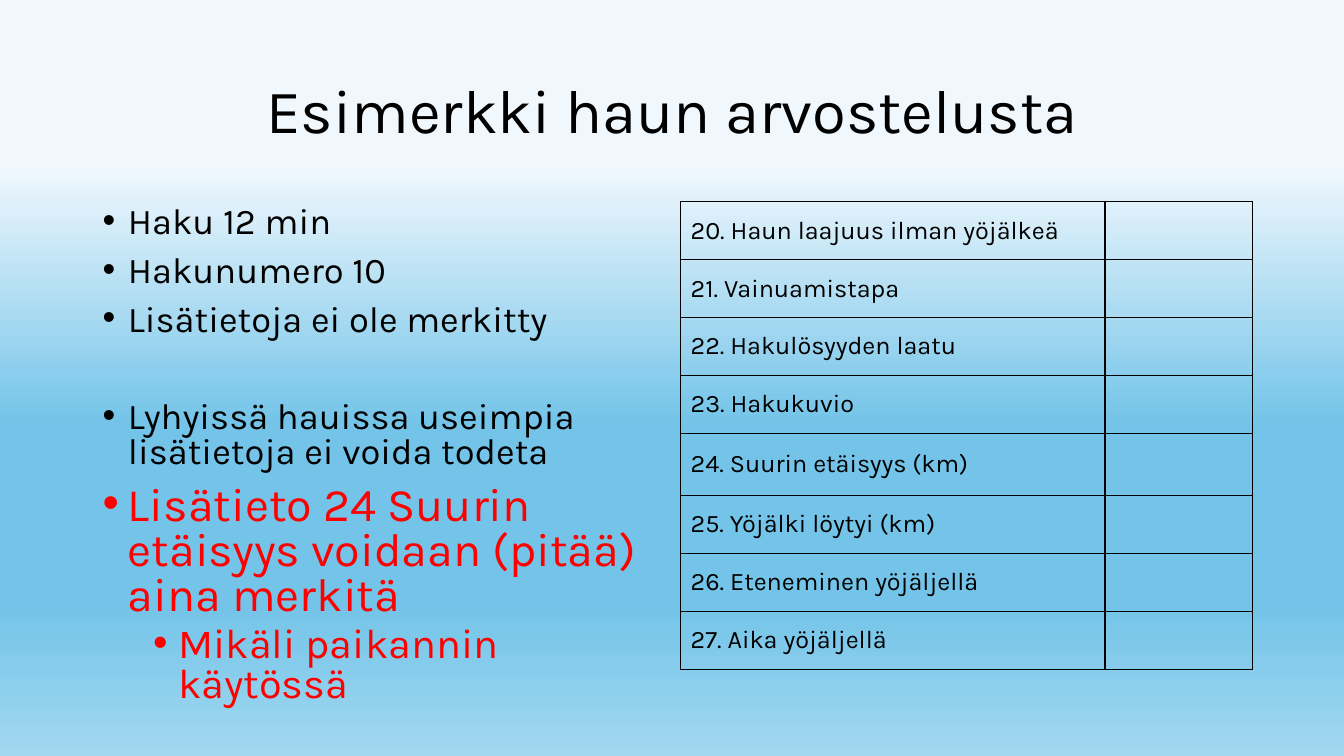
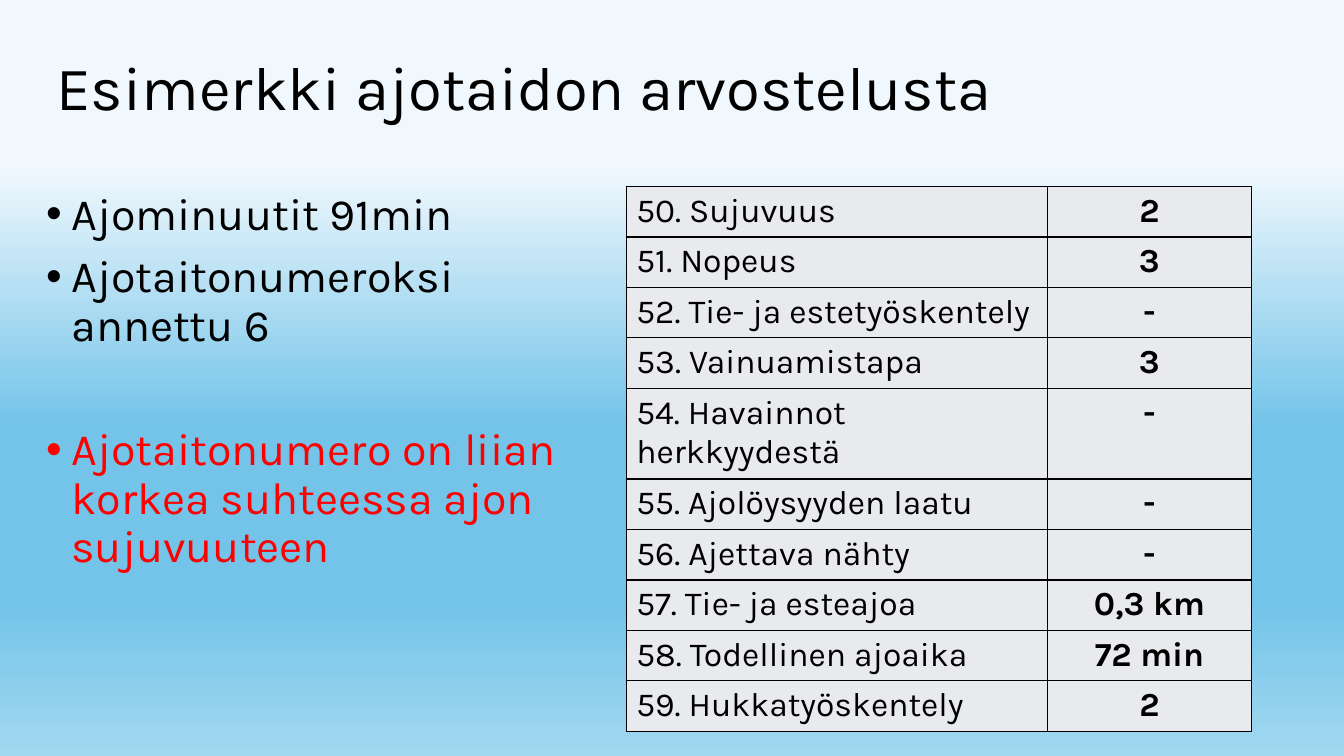
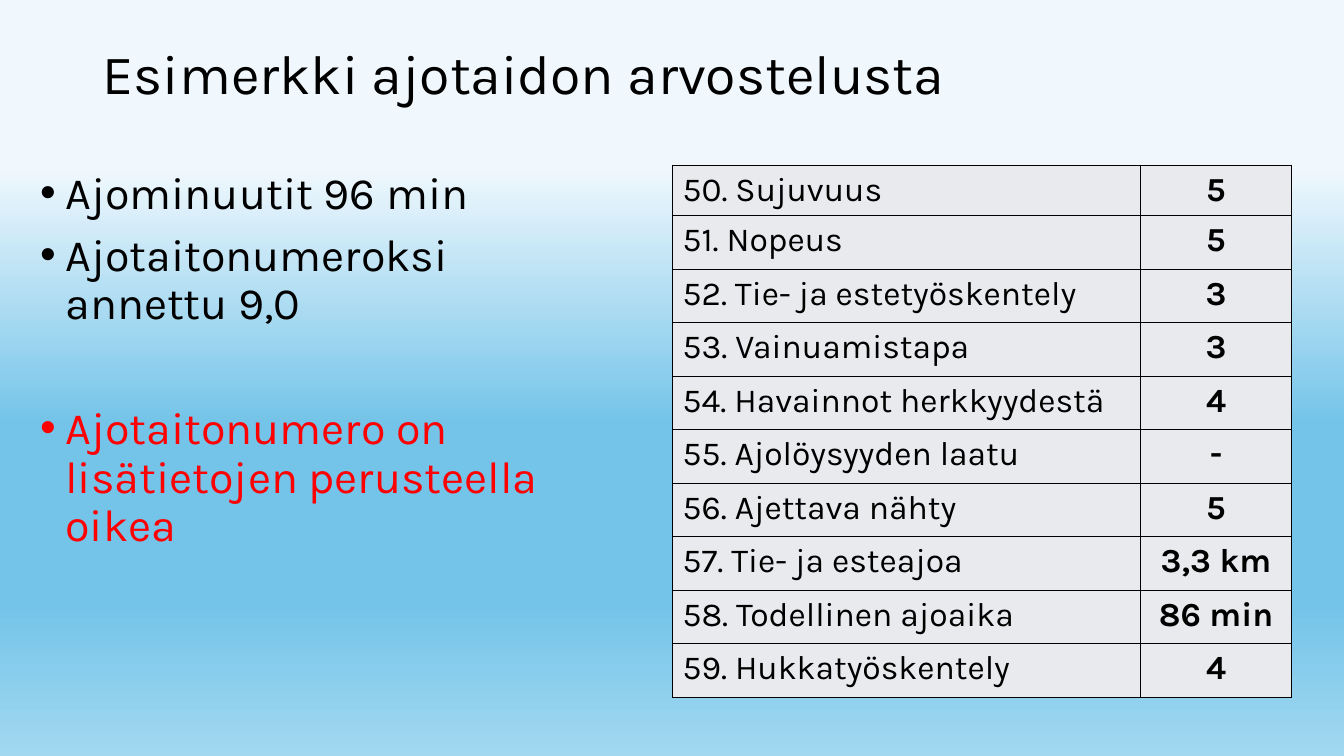
from lxml.etree import SubElement as Sub
from pptx import Presentation
from pptx.dml.color import RGBColor
from pptx.enum.text import MSO_ANCHOR as Anchor, PP_ALIGN as Align
from pptx.oxml.ns import qn
from pptx.util import Emu, Inches, Pt

FONT, BLACK, RED, GREY = "Karla", "000000", "FF0000", "E8EAED"
SKY = [(22, "F0F8FD"), (56, "74C4E9"), (80, "74C4E9"), (100, "A2D8F0")]
rgb = RGBColor.from_string

deck = Presentation()
deck.slide_width, deck.slide_height = Inches(13.33), Inches(7.5)
wide, high = deck.slide_width / 100, deck.slide_height / 100


def spot(box):
    """Turn left, top, width, height in percent of the slide into lengths."""
    return [Emu(int(v * u)) for v, u in zip(box, (wide, high, wide, high))]


def write(para, text, size, tone=BLACK, bold=False, align=Align.LEFT):
    para.text, para.alignment = text, align
    font = para.font
    font.name, font.size, font.bold = FONT, Pt(size), bold
    font.color.rgb = rgb(tone)


# Sky gradient on the master, shared by all slides
fill = deck.slide_master.background.fill
fill.gradient()
fill.gradient_angle = 270
stops = deck.slide_master.element.find(".//" + qn("a:gsLst"))
for old in list(stops):
    stops.remove(old)
for pos, tone in SKY:
    stop = Sub(stops, qn("a:gs"), pos=str(pos * 1000))
    Sub(stop, qn("a:srgbClr"), val=tone)

# Row labels
search = ["Haun laajuus ilman yöjälkeä", "Vainuamistapa", "Hakulösyyden laatu",
          "Hakukuvio", "Suurin etäisyys (km)", "Yöjälki löytyi (km)",
          "Eteneminen yöjäljellä", "Aika yöjäljellä"]
drive = ["Sujuvuus", "Nopeus", "Tie- ja estetyöskentely", "Vainuamistapa",
         "Havainnot herkkyydestä", "Ajolöysyyden laatu", "Ajettava nähty",
         "Tie- ja esteajoa", "Todellinen ajoaika", "Hukkatyöskentely"]

# Boxes, columns and rows in percent of the slide;
# points hold text, size, colour, level and space before
pages = [
    dict(title="Esimerkki haun arvostelusta", head=(6.9, 5.33, 86.27, 19.33),
         size=44, align=Align.CENTER,
         body=(6.9, 26.67, 42.54, 68), lead=0.8,
         points=[("Haku 12 min", 25.9, BLACK, 0, 10),
                 ("Hakunumero 10", 25.9, BLACK, 0, 10),
                 ("Lisätietoja ei ole merkitty", 25.9, BLACK, 0, 10),
                 ("Lyhyissä hauissa useimpia lisätietoja ei voida todeta",
                  25.9, BLACK, 0, 45),
                 ("Lisätieto 24 Suurin etäisyys voidaan (pitää) aina merkitä",
                  33.3, RED, 0, 10),
                 ("Mikäli paikannin käytössä", 29.6, RED, 1, 5)],
         grid=(50.64, 26.67), cols=(31.58, 10.95),
         rows=[7.67] * 4 + [8.2] + [7.67] * 3,
         first=20, names=search, marks=[""] * 8,
         text=18, anchor=Anchor.MIDDLE, shade=None),
    dict(title="Esimerkki ajotaidon arvostelusta", head=(3.45, 5.33, 86.27, 13.2),
         size=44, align=Align.LEFT,
         body=(2.7, 24.67, 40.14, 63.47), lead=0.9,
         points=[("Ajominuutit 91min", 32, BLACK, 0, 10),
                 ("Ajotaitonumeroksi annettu 6", 32, BLACK, 0, 10),
                 ("Ajotaitonumero on liian korkea suhteessa ajon sujuvuuteen",
                  32, RED, 0, 54.5)],
         grid=(46.59, 24.67), cols=(31.36, 15.15),
         rows=[6.53] * 4 + [11.73] + [6.53] * 5,
         first=50, names=drive,
         marks=["2", "3", "-", "3", "-", "-", "-", "0,3 km", "72 min", "2"],
         text=24, anchor=Anchor.TOP, shade=GREY),
    dict(title="Esimerkki ajotaidon arvostelusta", head=(6.9, 5.33, 86.27, 9.47),
         size=39.6, align=Align.LEFT,
         body=(2.25, 21.87, 42.54, 63.47), lead=0.9,
         points=[("Ajominuutit 96 min", 32, BLACK, 0, 10),
                 ("Ajotaitonumeroksi annettu 9,0", 32, BLACK, 0, 10),
                 ("Ajotaitonumero on lisätietojen perusteella oikea",
                  32, RED, 0, 54.5)],
         grid=(50.04, 21.87), cols=(34.81, 11.25),
         rows=[6.53] + [7.08] * 9,
         first=50, names=drive,
         marks=["5", "5", "3", "3", "4", "-", "5", "3,3 km", "86 min", "4"],
         text=24, anchor=Anchor.TOP, shade=GREY),
]

for page in pages:
    slide = deck.slides.add_slide(deck.slide_layouts[6])

    # Title
    frame = slide.shapes.add_textbox(*spot(page["head"])).text_frame
    frame.word_wrap, frame.vertical_anchor = True, Anchor.MIDDLE
    para = frame.paragraphs[0]
    para.line_spacing = 0.9
    write(para, page["title"], page["size"], align=page["align"])

    # Bullet points
    frame = slide.shapes.add_textbox(*spot(page["body"])).text_frame
    frame.word_wrap = True
    for num, (text, size, tone, level, gap) in enumerate(page["points"]):
        para = frame.add_paragraph() if num else frame.paragraphs[0]
        para.level, para.line_spacing, para.space_before = level, page["lead"], Pt(gap)
        props = para._p.get_or_add_pPr()
        props.set("marL", str(Inches(0.25 + 0.5 * level)))
        props.set("indent", str(-Inches(0.25)))
        Sub(props, qn("a:buFont"), typeface="Arial")
        Sub(props, qn("a:buChar"), char="•")
        write(para, text, size, tone)

    # Score table
    cols, rows = page["cols"], page["rows"]
    area = spot((*page["grid"], sum(cols), sum(rows)))
    table = slide.shapes.add_table(len(rows), len(cols), *area).table
    table.first_row = table.horz_banding = False
    for col, share in zip(table.columns, cols):
        col.width = Emu(int(share * wide))
    for row, share in zip(table.rows, rows):
        row.height = Emu(int(share * high))
    for num, (name, mark) in enumerate(zip(page["names"], page["marks"])):
        label, score = table.rows[num].cells
        write(label.text_frame.paragraphs[0], f"{page['first'] + num}. {name}",
              page["text"])
        write(score.text_frame.paragraphs[0], mark, page["text"],
              bold=True, align=Align.CENTER)
        for cell in (label, score):
            cell.vertical_anchor = page["anchor"]
            props = cell._tc.get_or_add_tcPr()
            for side in ("lnL", "lnR", "lnT", "lnB"):
                line = Sub(props, qn("a:" + side), w=str(Pt(1)))
                Sub(Sub(line, qn("a:solidFill")), qn("a:srgbClr"), val=BLACK)
            if page["shade"]:
                cell.fill.solid()
                cell.fill.fore_color.rgb = rgb(page["shade"])
            else:
                cell.fill.background()

deck.save("out.pptx")
